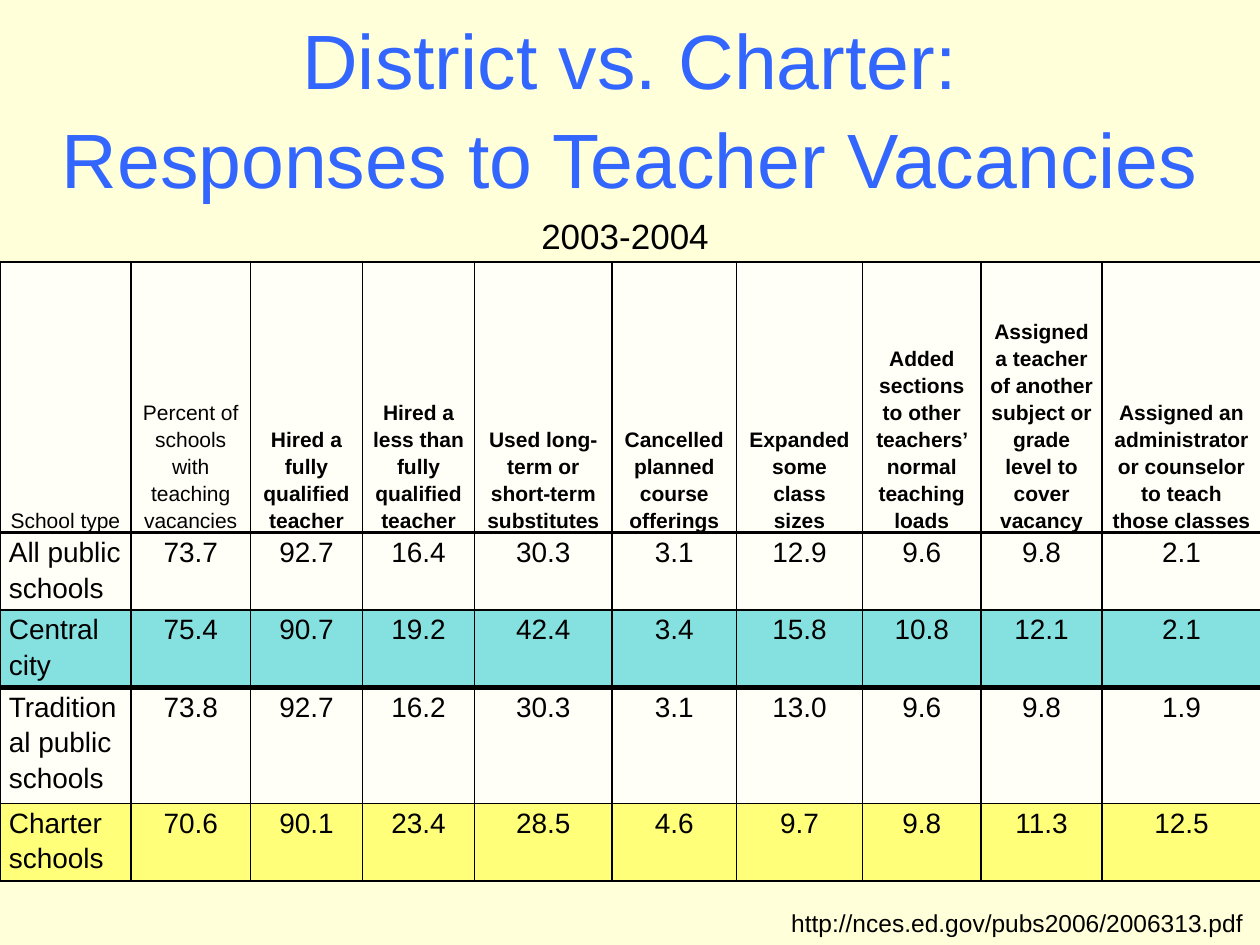
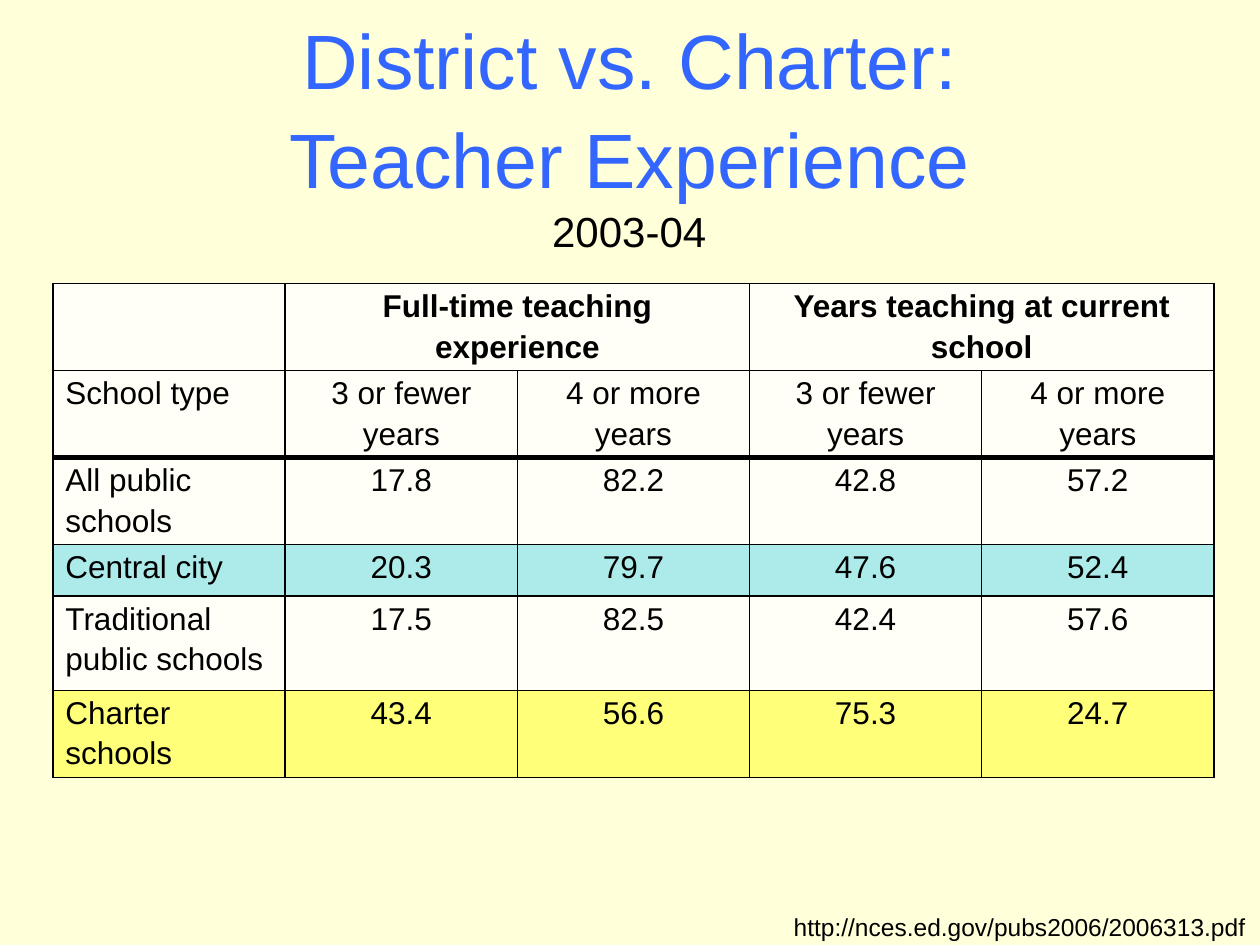
"""Build two slides comparing teacher staffing in district and charter schools."""
from lxml.etree import SubElement
from pptx import Presentation
from pptx.dml.color import RGBColor
from pptx.enum.text import MSO_ANCHOR as Anchor, PP_ALIGN as Align
from pptx.oxml.ns import qn
from pptx.util import Cm, Pt

COLORS = {
    "background": "FFFFD9",
    "title": "3366FF",
    "text": "000000",
    "plain": "FFFFF7",
    "city_dark": "85E0E0",
    "city_light": "ADEBEB",
    "charter": "FFFF7A",
}
FONT = "Arial"
SOURCE = "http://nces.ed.gov/pubs2006/2006313.pdf"

SLIDES = [
    {
        "title": "District vs. Charter:\nResponses to Teacher Vacancies",
        "years": ("2003-2004 ", (0, 4.19, 25.4, 1.12), 20),
        "source_box": (15.7, 18.19, 9.65, 0.86),
        "table_corner": (0, 5.28),
        "column_widths": [2.64, 2.41, 2.26, 2.26, 2.77, 2.51, 2.54, 2.39, 2.44, 3.2],
        "row_heights": [5.46, 1.55, 1.55, 2.34, 1.57],
        "row_fills": ["plain", "plain", "city_dark", "plain", "charter"],
        "rules": [1, 2.25, 1, 3, 1, 1],
        "side_margin": 0.18,
        "header_size": 12,
        "body_size": 16,
        "header_anchor": Anchor.BOTTOM,
        "corner_align": Align.CENTER,
        "header_rows": 1,
        "bold_from": 2,
        "merges": [],
        "rows": [
            ["School type", "Percent of schools with teaching vacancies",
             "Hired a fully qualified teacher", "Hired a less than fully qualified teacher",
             "Used long-term or short-term substitutes", "Cancelled planned course offerings",
             "Expanded some class sizes", "Added sections to other teachers’ normal teaching loads",
             "Assigned a teacher of another subject or grade level to cover vacancy",
             "Assigned an administrator or counselor to teach those classes"],
            ["All public schools", 73.7, 92.7, 16.4, 30.3, 3.1, 12.9, 9.6, 9.8, 2.1],
            ["Central city", 75.4, 90.7, 19.2, 42.4, 3.4, 15.8, 10.8, 12.1, 2.1],
            ["Traditional public schools", 73.8, 92.7, 16.2, 30.3, 3.1, 13.0, 9.6, 9.8, 1.9],
            ["Charter schools", 70.6, 90.1, 23.4, 28.5, 4.6, 9.7, 9.8, 11.3, 12.5],
        ],
    },
    {
        "title": "District vs. Charter:\nTeacher Experience",
        "years": ("2003-04", (1.47, 4.01, 22.43, 1.3), 24),
        "source_box": (15.75, 18.26, 9.65, 0.86),
        "table_corner": (1.07, 5.72),
        "column_widths": [4.68] * 5,
        "row_heights": [1.75, 1.75, 1.75, 1.04, 1.9, 1.75],
        "row_fills": ["plain", "plain", "plain", "city_light", "plain", "charter"],
        "rules": [1, 1, 3, 1, 1, 1, 1],
        "side_margin": 0.25,
        "header_size": 18,
        "body_size": 18,
        "header_anchor": Anchor.TOP,
        "corner_align": Align.LEFT,
        "header_rows": 1,
        "bold_from": 1,
        "merges": [1, 3],
        "rows": [
            ["", "Full-time teaching experience", "", "Years teaching at current school", ""],
            ["School type"] + ["3 or fewer years", "4 or more years"] * 2,
            ["All public schools", 17.8, 82.2, 42.8, 57.2],
            ["Central city", 20.3, 79.7, 47.6, 52.4],
            ["Traditional public schools", 17.5, 82.5, 42.4, 57.6],
            ["Charter schools", 43.4, 56.6, 75.3, 24.7],
        ],
    },
]


def write(text_frame, text, size, color="text", align=Align.LEFT, spacing=1.0, bold=False):
    text_frame.text = text
    for paragraph in text_frame.paragraphs:
        paragraph.alignment = align
        paragraph.line_spacing = spacing
        for run in paragraph.runs:
            run.font.name = FONT
            run.font.size = Pt(size)
            run.font.bold = bold
            run.font.color.rgb = RGBColor.from_string(COLORS[color])


def draw_borders(cell, top, bottom):
    properties = cell._tc.get_or_add_tcPr()
    for side, width in (("L", 1), ("R", 1), ("T", top), ("B", bottom)):
        line = SubElement(properties, qn(f"a:ln{side}"), w=str(Pt(width)))
        fill = SubElement(line, qn("a:solidFill"))
        SubElement(fill, qn("a:srgbClr"), val=COLORS["text"])


presentation = Presentation()
presentation.slide_width, presentation.slide_height = Cm(25.4), Cm(19.05)

for content in SLIDES:
    slide = presentation.slides.add_slide(presentation.slide_layouts[6])
    slide.background.fill.solid()
    slide.background.fill.fore_color.rgb = RGBColor.from_string(COLORS["background"])

    title = slide.shapes.add_textbox(0, 0, Cm(25.4), Cm(3.18))
    title.text_frame.word_wrap = True
    write(title.text_frame, content["title"], 44, "title", Align.CENTER, 1.07)

    source = slide.shapes.add_textbox(*map(Cm, content["source_box"]))
    source.text_frame.word_wrap = False
    write(source.text_frame, SOURCE, 14)

    years_text, years_box, years_size = content["years"]
    years = slide.shapes.add_textbox(*map(Cm, years_box))
    years.text_frame.word_wrap = True
    write(years.text_frame, years_text, years_size, align=Align.CENTER)

    widths, heights = content["column_widths"], content["row_heights"]
    table = slide.shapes.add_table(
        len(heights), len(widths), *map(Cm, content["table_corner"]),
        Cm(sum(widths)), Cm(sum(heights))).table
    table.first_row = table.horz_banding = False
    for column, width in zip(table.columns, widths):
        column.width = Cm(width)
    for row, height in zip(table.rows, heights):
        row.height = Cm(height)

    for row_index, values in enumerate(content["rows"]):
        is_header = row_index < content["header_rows"]
        for column_index, value in enumerate(values):
            cell = table.cell(row_index, column_index)
            cell.margin_left = cell.margin_right = Cm(content["side_margin"])
            cell.margin_top = cell.margin_bottom = 0
            cell.vertical_anchor = content["header_anchor"] if is_header else Anchor.TOP
            align = Align.CENTER
            if column_index == 0:
                align = content["corner_align"] if is_header else Align.LEFT
            write(cell.text_frame, str(value),
                  content["header_size"] if is_header else content["body_size"],
                  align=align, spacing=1.15,
                  bold=is_header and column_index >= content["bold_from"])
            draw_borders(cell, *content["rules"][row_index:row_index + 2])
            cell.fill.solid()
            cell.fill.fore_color.rgb = RGBColor.from_string(
                COLORS[content["row_fills"][row_index]])

    for first in content["merges"]:
        table.cell(0, first).merge(table.cell(0, first + 1))

presentation.save("out.pptx")
